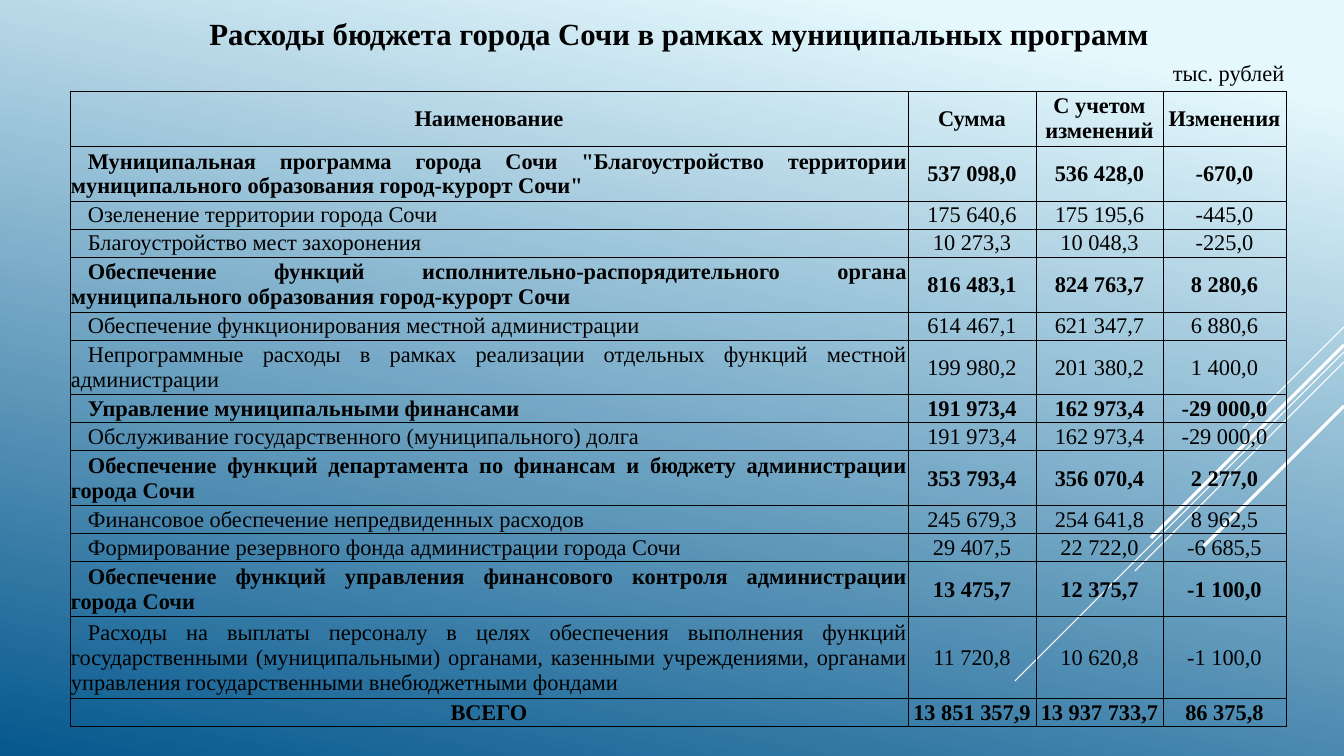
"""Build the slide with the Sochi budget spending table by municipal programme."""
from lxml.etree import SubElement
from pptx import Presentation
from pptx.dml.color import RGBColor
from pptx.enum.shapes import MSO_CONNECTOR as Connector
from pptx.enum.text import MSO_ANCHOR as Anchor, MSO_AUTO_SIZE as AutoSize, PP_ALIGN as Align
from pptx.oxml.ns import qn
from pptx.util import Emu, Pt

SLIDE_SIZE = (1344, 756)
FONT = "Times New Roman"
BLACK, WHITE = "000000", "FFFFFF"
GRADIENT = [(0.1, "E4F8FD"), (1, "06588E")]
GRADIENT_ANGLE = 258

CAPTIONS = [
    ("Расходы бюджета города Сочи в рамках муниципальных программ",
     (194, 10, 970, 47), 22, True, Align.CENTER),
    ("тыс. рублей", (1163, 54, 152, 37), 16, False, Align.LEFT),
]

# start height on the right edge, run to the lower left, line width in points
RAYS = [(327, 101, 0.75), (352, 329, 0.75), (362, 209, 0.75), (345, 193, 2.25), (406, 140, 2.25)]

TABLE_LEFT, TABLE_TOP = 70, 91
COLUMN_WIDTHS = [838, 128, 127, 123]
FIRST_LINE, NEXT_LINE = 28, 27
INDENT = 17
HEADER = (True, 2, "Наименование", "Сумма", "С учетом изменений", "Изменения")
PROGRAMMES = [
    (True, 2, 'Муниципальная программа города Сочи "Благоустройство территории '
     'муниципального образования город-курорт Сочи"', "537 098,0", "536 428,0", "-670,0"),
    (False, 1, "Озеленение территории города Сочи", "175 640,6", "175 195,6", "-445,0"),
    (False, 1, "Благоустройство мест захоронения", "10 273,3", "10 048,3", "-225,0"),
    (True, 2, "Обеспечение функций исполнительно-распорядительного органа "
     "муниципального образования город-курорт Сочи", "816 483,1", "824 763,7", "8 280,6"),
    (False, 1, "Обеспечение функционирования местной администрации",
     "614 467,1", "621 347,7", "6 880,6"),
    (False, 2, "Непрограммные расходы в рамках реализации отдельных функций местной "
     "администрации", "199 980,2", "201 380,2", "1 400,0"),
    (True, 1, "Управление муниципальными финансами", "191 973,4", "162 973,4", "-29 000,0"),
    (False, 1, "Обслуживание государственного (муниципального) долга",
     "191 973,4", "162 973,4", "-29 000,0"),
    (True, 2, "Обеспечение функций департамента по финансам и бюджету администрации "
     "города Сочи", "353 793,4", "356 070,4", "2 277,0"),
    (False, 1, "Финансовое обеспечение непредвиденных расходов",
     "245 679,3", "254 641,8", "8 962,5"),
    (False, 1, "Формирование резервного фонда администрации города Сочи",
     "29 407,5", "22 722,0", "-6 685,5"),
    (True, 2, "Обеспечение функций управления финансового контроля администрации "
     "города Сочи", "13 475,7", "12 375,7", "-1 100,0"),
    (False, 3, "Расходы на выплаты персоналу в целях обеспечения выполнения функций "
     "государственными (муниципальными) органами, казенными учреждениями, органами "
     "управления государственными внебюджетными фондами",
     "11 720,8", "10 620,8", "-1 100,0"),
]
TOTAL = (True, 1, "ВСЕГО", "13 851 357,9", "13 937 733,7", "86 375,8")


def px(length):
    """Turn px into EMU."""
    return Emu(round(length * 914400 / 100.8))


def color(code):
    """Turn a hex string into a colour."""
    return RGBColor.from_string(code)


def set_all(target, values):
    """Set every attribute named in a dict."""
    for name, value in values.items():
        setattr(target, name, value)


def write(frame, wording, size, bold, align):
    """Write one formatted paragraph into a text frame."""
    paragraph = frame.paragraphs[0]
    paragraph.alignment = align
    run = paragraph.add_run()
    run.text = wording
    set_all(run.font, {"name": FONT, "size": Pt(size), "bold": bold})
    run.font.color.rgb = color(BLACK)
    return paragraph


def add_borders(cell):
    """Draw a thin black line on all four sides of a cell."""
    properties = cell._tc.get_or_add_tcPr()
    for side in ("a:lnL", "a:lnR", "a:lnT", "a:lnB"):
        border = SubElement(properties, qn(side), w=str(Pt(0.5)))
        SubElement(SubElement(border, qn("a:solidFill")), qn("a:srgbClr"), val=BLACK)


def add_background(slide):
    """Fill the slide with the blue gradient and draw the diagonal rays."""
    fill = slide.background.fill
    fill.gradient()
    fill.gradient_angle = GRADIENT_ANGLE
    for stop, (position, code) in zip(fill.gradient_stops, GRADIENT):
        stop.position = position
        stop.color.rgb = color(code)
    right = SLIDE_SIZE[0]
    for top, run, width in RAYS:
        ray = slide.shapes.add_connector(
            Connector.STRAIGHT, px(right), px(top), px(right - run), px(top + run))
        ray.line.color.rgb = color(WHITE)
        ray.line.width = Pt(width)
        SubElement(ray._element.spPr, qn("a:effectLst"))


def add_captions(slide):
    """Add the title and the unit of measure."""
    for wording, box, size, bold, align in CAPTIONS:
        frame = slide.shapes.add_textbox(*map(px, box)).text_frame
        set_all(frame, {"word_wrap": True, "auto_size": AutoSize.SHAPE_TO_FIT_TEXT})
        write(frame, wording, size, bold, align)


def add_spending(slide):
    """Add the spending table."""
    entries = [HEADER, *PROGRAMMES, TOTAL]
    heights = [FIRST_LINE + NEXT_LINE * (entry[1] - 1) for entry in entries]
    spending = slide.shapes.add_table(
        len(entries), len(COLUMN_WIDTHS), px(TABLE_LEFT), px(TABLE_TOP),
        px(sum(COLUMN_WIDTHS)), px(sum(heights))).table
    set_all(spending, {"first_row": True, "horz_banding": False})
    for column, width in zip(spending.columns, COLUMN_WIDTHS):
        column.width = px(width)
    for row, height, entry in zip(spending.rows, heights, entries):
        row.height = px(height)
        bold, _, *wordings = entry
        inset = px(0 if entry is HEADER else 1)
        for index, (cell, wording) in enumerate(zip(row.cells, wordings)):
            set_all(cell, {"vertical_anchor": Anchor.MIDDLE, "margin_left": inset,
                           "margin_right": inset, "margin_top": inset, "margin_bottom": 0})
            add_borders(cell)
            cell.fill.background()
            is_programme = index == 0 and entry in PROGRAMMES
            align = Align.JUSTIFY if is_programme else Align.CENTER
            paragraph = write(cell.text_frame, wording, 16, bold, align)
            if is_programme:
                paragraph._p.get_or_add_pPr().set("indent", str(px(INDENT)))


def main():
    """Build and save the presentation."""
    presentation = Presentation()
    presentation.slide_width, presentation.slide_height = map(px, SLIDE_SIZE)
    slide = presentation.slides.add_slide(presentation.slide_layouts[6])
    add_background(slide)
    add_captions(slide)
    add_spending(slide)
    presentation.save("out.pptx")


if __name__ == "__main__":
    main()
